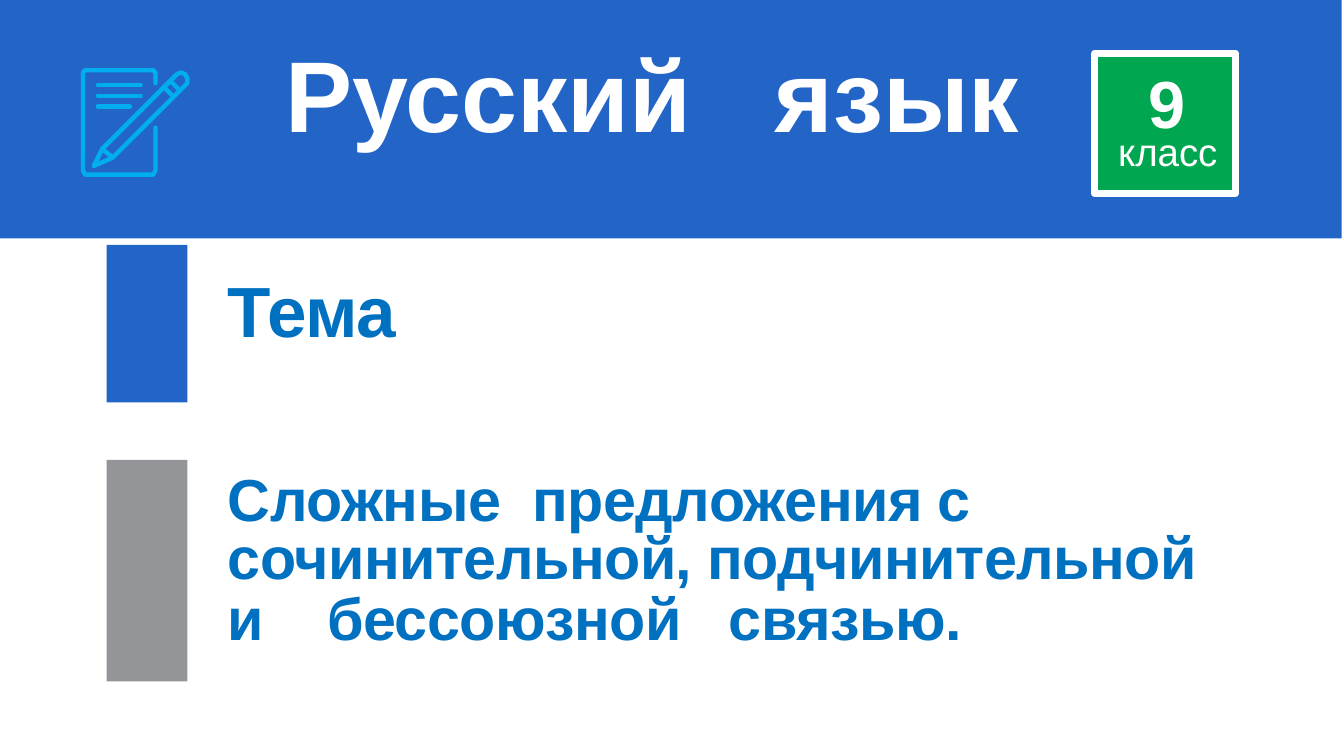
import pptx
import pptx.util
import pptx.dml.color
import pptx.enum.shapes
import pptx.enum.text
import pptx.oxml
import pptx.oxml.ns

Inches = pptx.util.Inches
Pt = pptx.util.Pt
RGBColor = pptx.dml.color.RGBColor

BLUE = RGBColor(0x23, 0x65, 0xC7)
TEXT_BLUE = RGBColor(0x00, 0x70, 0xC0)
GRAY = RGBColor(0x93, 0x95, 0x98)
GREEN = RGBColor(0x00, 0xA6, 0x50)
CYAN = RGBColor(0x00, 0xAE, 0xEF)
WHITE = RGBColor(0xFF, 0xFF, 0xFF)

presentation = pptx.Presentation()
presentation.slide_width = Inches(6.31)
presentation.slide_height = Inches(3.55)
slide = presentation.slides.add_slide(presentation.slide_layouts[5])


def set_text(shape, box, paragraphs):
    """Place a text shape; each paragraph is its text, font format and paragraph format."""
    shape.left, shape.top, shape.width, shape.height = map(Inches, box)
    frame = shape.text_frame
    frame_format = {
        "margin_left": 0, "margin_top": 0, "margin_right": 0, "margin_bottom": 0,
        "word_wrap": True,
        "auto_size": pptx.enum.text.MSO_AUTO_SIZE.NONE,
        "vertical_anchor": pptx.enum.text.MSO_ANCHOR.TOP,
    }
    for name, value in frame_format.items():
        setattr(frame, name, value)
    for index, (text, font_format, paragraph_format) in enumerate(paragraphs):
        paragraph = frame.add_paragraph() if index else frame.paragraphs[0]
        paragraph.alignment = pptx.enum.text.PP_ALIGN.LEFT
        for name, value in paragraph_format.items():
            setattr(paragraph, name, value)
        run = paragraph.add_run()
        run.text = text
        run.font.name = "Arial"
        run.font.color.rgb = font_format["color"]
        run.font.size = Pt(font_format["size"])
        run.font.bold = font_format["bold"]
        # Letter spacing in hundredths of a point
        run._r.get_or_add_rPr().set("spc", str(font_format.get("spacing", 0)))


# Header band, side markers and class badge
rectangles = [
    ((0, 0, 6.3, 1.12), BLUE, None),
    ((0.5, 1.15, 0.38, 0.74), BLUE, None),
    ((0.5, 2.16, 0.38, 1.04), GRAY, None),
    ((5.14, 0.25, 0.66, 0.66), GREEN, WHITE),
]
for box, fill_color, line_color in rectangles:
    rectangle = slide.shapes.add_shape(
        pptx.enum.shapes.MSO_SHAPE.RECTANGLE, *map(Inches, box))
    rectangle.shadow.inherit = False
    rectangle.fill.solid()
    rectangle.fill.fore_color.rgb = fill_color
    if line_color is None:
        rectangle.line.fill.background()
    else:
        rectangle.line.color.rgb = line_color
        rectangle.line.width = Pt(2.4)

# Title, moved in front of the header band
title = slide.shapes.title
slide.shapes._spTree.append(title._element)
set_text(title, (1.34, 0.15, 4.19, 0.59), [
    ("Русский   язык", {"size": 34, "bold": True, "color": WHITE}, {}),
])

# Topic and badge wording
topic_font = {"size": 20, "bold": True, "color": TEXT_BLUE, "spacing": -20}
line_spacing = Pt(19.5)
text_boxes = [
    ((1.07, 1.38, 5.09, 1.72), [
        ("Тема", {**topic_font, "size": 24}, {"line_spacing": line_spacing}),
        ("Сложные  предложения с  сочинительной, подчинительной", topic_font,
         {"line_spacing": line_spacing, "space_before": Pt(42)}),
        ("и    бессоюзной   связью.", topic_font,
         {"line_spacing": line_spacing, "space_before": Pt(1.1)}),
    ]),
    ((5.39, 0.29, 0.19, 0.36), [("9", {"size": 22.5, "bold": True, "color": WHITE}, {})]),
    ((5.25, 0.6, 0.5, 0.22), [("класс", {"size": 13, "bold": False, "color": WHITE}, {})]),
]
for box, paragraphs in text_boxes:
    set_text(slide.shapes.add_textbox(0, 0, 0, 0), box, paragraphs)

# Notebook and pencil icon
page_outline = [(0.73, 0.39), (0.73, 0.34), (0.72, 0.33), (0.4, 0.33), (0.39, 0.34),
                (0.39, 0.8), (0.4, 0.82), (0.72, 0.82), (0.73, 0.8), (0.73, 0.6)]
pencil_outline = [(0.44, 0.78), (0.48, 0.7), (0.83, 0.35), (0.85, 0.34), (0.87, 0.35),
                  (0.88, 0.37), (0.88, 0.39), (0.53, 0.74)]
icon_strokes = []
for points, closed in [(page_outline, False), (pencil_outline, True)]:
    vertices = [(Inches(x), Inches(y)) for x, y in points]
    builder = slide.shapes.build_freeform(*vertices[0])
    builder.add_line_segments(vertices[1:], close=closed)
    outline = builder.convert_to_shape()
    outline.shadow.inherit = False
    outline.fill.background()
    icon_strokes.append(outline)

text_rules = [(0.46, 0.4, 0.66, 0.4), (0.46, 0.45, 0.66, 0.45), (0.46, 0.5, 0.61, 0.5)]
pencil_bands = [(0.48, 0.7, 0.53, 0.74), (0.77, 0.41, 0.81, 0.45), (0.8, 0.38, 0.84, 0.42)]
for ends in text_rules + pencil_bands:
    rule = slide.shapes.add_connector(
        pptx.enum.shapes.MSO_CONNECTOR.STRAIGHT, *map(Inches, ends))
    icon_strokes.append(rule)

for stroke in icon_strokes:
    stroke.line.color.rgb = CYAN
    stroke.line.width = Pt(1.5)
    stroke.line._get_or_add_ln().set("cap", "rnd")
    properties = stroke._element.spPr
    if properties.find(pptx.oxml.ns.qn("a:effectLst")) is None:
        properties.append(pptx.oxml.parse_xml(
            f"<a:effectLst {pptx.oxml.ns.nsdecls('a')}/>"))

presentation.save("out.pptx")
